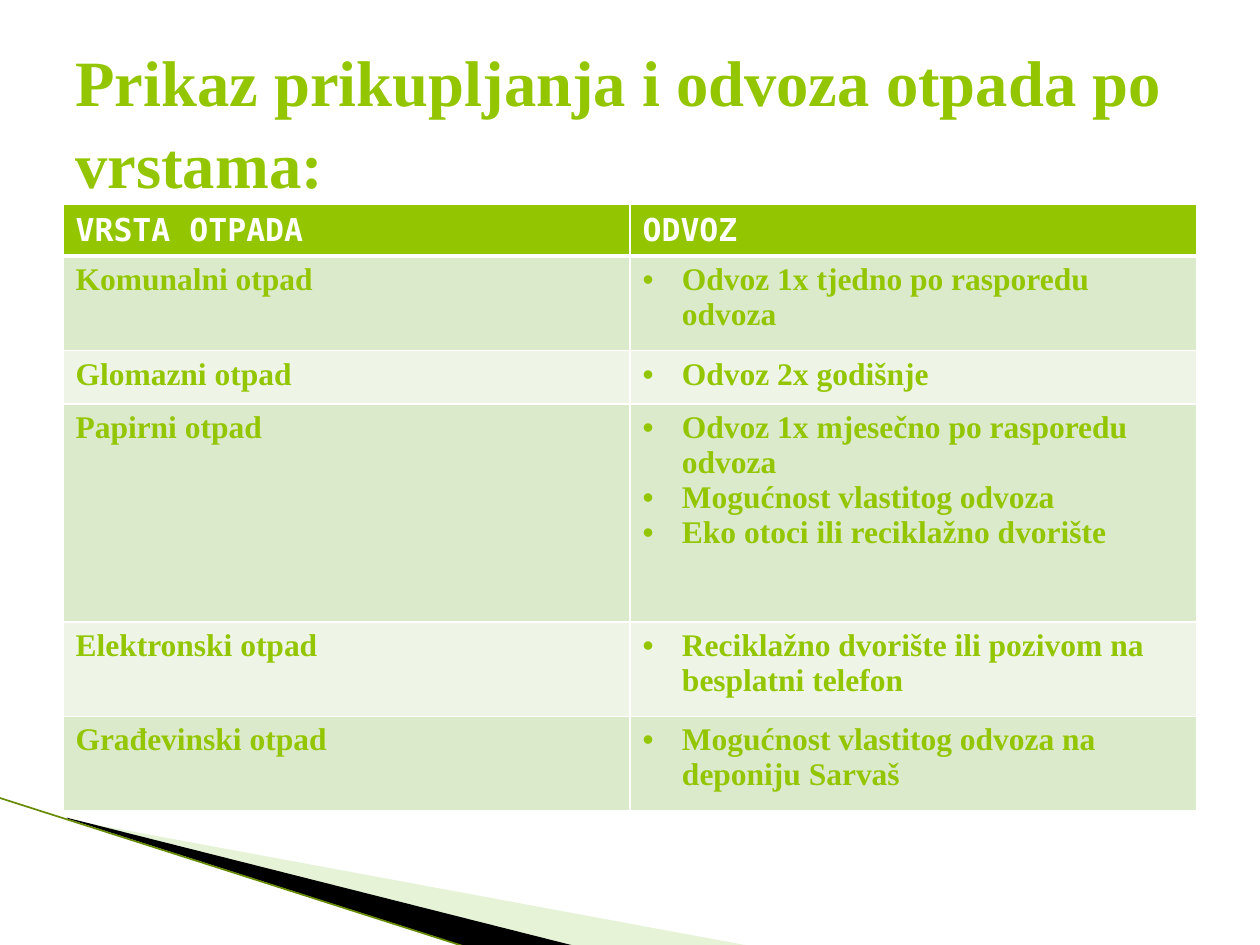
from lxml import etree
from pptx import Presentation
from pptx.dml.color import RGBColor
from pptx.enum.shapes import MSO_CONNECTOR
from pptx.enum.text import MSO_ANCHOR
from pptx.oxml.ns import qn
from pptx.util import Pt

MIDDLE, TOP = MSO_ANCHOR.MIDDLE, MSO_ANCHOR.TOP
STRAIGHT = MSO_CONNECTOR.STRAIGHT

# Content
TITLE = "Prikaz prikupljanja i odvoza otpada po vrstama:"
HEAD = ("VRSTA OTPADA", "ODVOZ")
ROWS = [  # waste type, collection, row height
    ("Komunalni otpad", ["Odvoz 1x tjedno po rasporedu odvoza"], 54),
    ("Glomazni otpad", ["Odvoz 2x godišnje"], 30.5),
    ("Papirni otpad", ["Odvoz 1x mjesečno po rasporedu odvoza",
                       "Mogućnost vlastitog odvoza",
                       "Eko otoci ili reciklažno dvorište"], 124.5),
    ("Elektronski otpad",
     ["Reciklažno dvorište ili pozivom na besplatni telefon"], 54),
    ("Građevinski otpad", ["Mogućnost vlastitog odvoza na deponiju Sarvaš"], 54),
]
HEAD_H = 29.5
LEFT, WIDTH = 36, 648
INDENT = 22.5

THEME = {
    "green": "94C600", "white": "FFFFFF", "black": "000000",
    "bands": ("DCEACC", "EEF5E7"), "pale": "C3E19D", "edge": "668A00",
    "serif": "Times New Roman", "mono": "DejaVu Sans Mono",
    "title": 36.9, "body": 18,
}

# Corner wedges: points, colour, opacity in percent
WEDGES = [
    ([(39.6, 468.5), (428.4, 540.5), (328.3, 540.5), (39.6, 468)], "pale", 40),
    ([(38.2, 467.3), (329, 540.7), (267.8, 541.4), (38.9, 468)], "black", 100),
]
EDGE = (-0.7, 455.8, 267.1, 541.4)


def rgb(name):
    return RGBColor.from_string(THEME.get(name, name))


def style(para, face, size, color):
    font = para.font
    font.name, font.size, font.bold = THEME[face], Pt(THEME[size]), True
    font.color.rgb = rgb(color)


def bullet(para):
    props = para._p.get_or_add_pPr()
    props.set("marL", str(Pt(INDENT)))
    props.set("indent", str(-Pt(INDENT)))
    etree.SubElement(props, qn("a:buFont"), typeface="Arial")
    etree.SubElement(props, qn("a:buChar"), char="•")


def border(cell, bottom):
    props = cell._tc.get_or_add_tcPr()
    sides = (("lnL", 1), ("lnR", 1), ("lnT", 1), ("lnB", bottom))
    for spot, (side, width) in enumerate(sides):
        line = etree.Element(qn("a:" + side), w=str(Pt(width)))
        fill = etree.SubElement(line, qn("a:solidFill"))
        etree.SubElement(fill, qn("a:srgbClr"), val=THEME["white"])
        props.insert(spot, line)


def put(cell, lines, fill, face, color, anchor, bottom=1, dots=False):
    cell.fill.solid()
    cell.fill.fore_color.rgb = rgb(fill)
    cell.vertical_anchor = anchor
    border(cell, bottom)
    frame = cell.text_frame
    for i, text in enumerate(lines):
        para = frame.add_paragraph() if i else frame.paragraphs[0]
        para.text = text
        if dots:
            bullet(para)
        style(para, face, "body", color)


def wedge(shapes, points, color, alpha):
    pts = [(Pt(x), Pt(y)) for x, y in points]
    form = shapes.build_freeform(*pts[0])
    form.add_line_segments(pts[1:], close=True)
    shape = form.convert_to_shape()
    shape.shadow.inherit = False
    shape.line.fill.background()
    shape.fill.solid()
    shape.fill.fore_color.rgb = rgb(color)
    if alpha < 100:
        tint = shape._element.spPr.find(".//" + qn("a:srgbClr"))
        etree.SubElement(tint, qn("a:alpha"), val=str(alpha * 1000))


def main():
    deck = Presentation()
    deck.slide_width, deck.slide_height = Pt(720), Pt(540)
    shapes = deck.slides.add_slide(deck.slide_layouts[6]).shapes

    # Corner decoration
    for points, color, alpha in WEDGES:
        wedge(shapes, points, color, alpha)
    edge = shapes.add_connector(STRAIGHT, *(Pt(v) for v in EDGE))
    edge.line.color.rgb = rgb("edge")
    edge.line.width = Pt(0.95)
    etree.SubElement(edge._element.spPr, qn("a:effectLst"))

    # Table
    heights = [HEAD_H] + [row[2] for row in ROWS]
    table = shapes.add_table(len(heights), 2, Pt(LEFT), Pt(116.9),
                             Pt(WIDTH), Pt(sum(heights))).table
    for row, height in zip(table.rows, heights):
        row.height = Pt(height)
    for col, text in enumerate(HEAD):
        put(table.cell(0, col), [text], "green", "mono", "white", MIDDLE, 3)
    for i, (kind, notes, _) in enumerate(ROWS):
        band = THEME["bands"][i % 2]
        put(table.cell(i + 1, 0), [kind], band, "serif", "green", TOP)
        put(table.cell(i + 1, 1), notes, band, "serif", "green", TOP, dots=True)

    # Title
    frame = shapes.add_textbox(Pt(LEFT), Pt(23), Pt(WIDTH), Pt(90)).text_frame
    frame.word_wrap = True
    frame.vertical_anchor = MIDDLE
    para = frame.paragraphs[0]
    para.text = TITLE
    para.line_spacing = 1.06
    style(para, "serif", "title", "green")

    deck.save("out.pptx")


if __name__ == "__main__":
    main()
